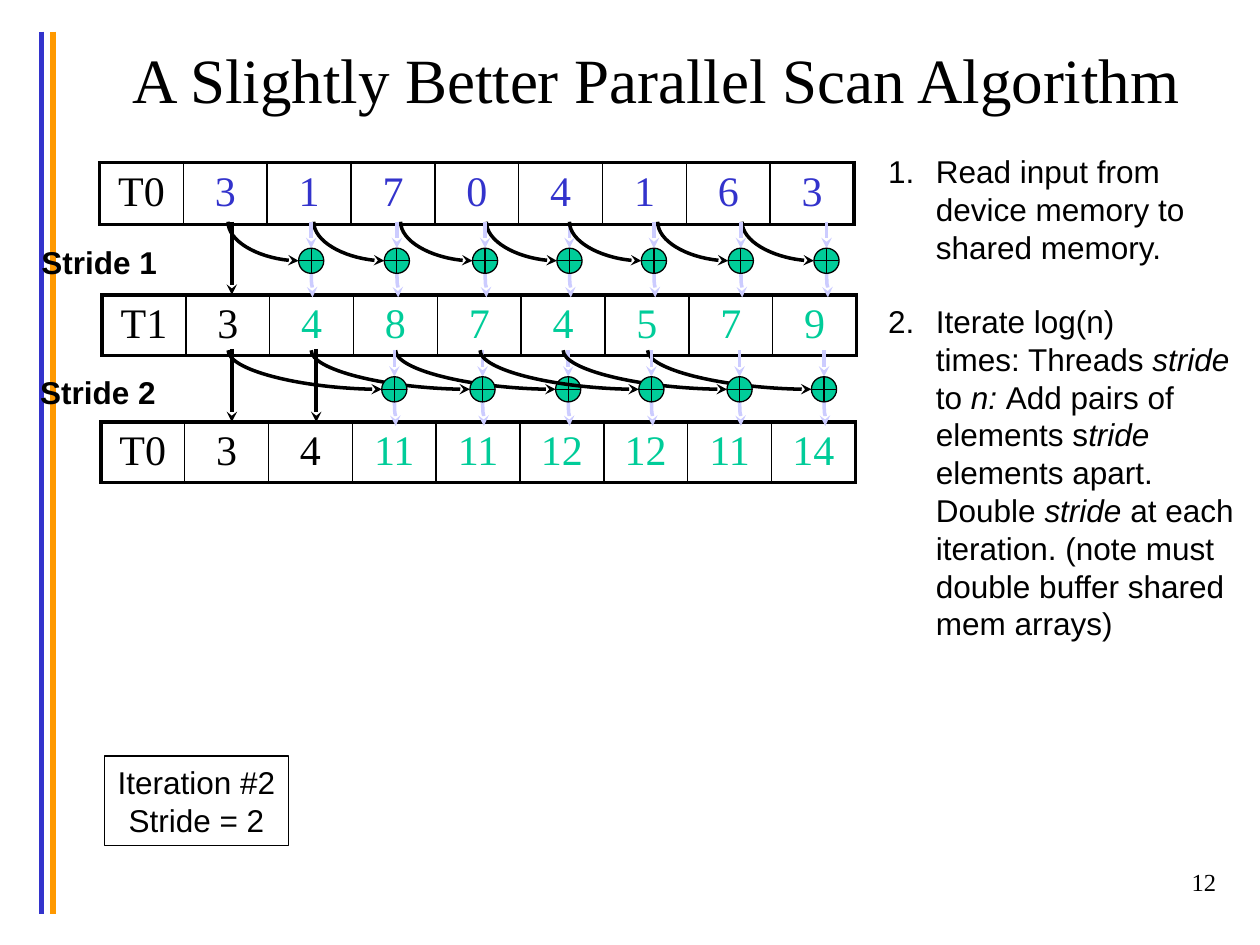
from lxml import etree
from pptx import Presentation
from pptx.dml.color import RGBColor
from pptx.enum import shapes as kinds, text as txt
from pptx.oxml.ns import qn
from pptx.util import Inches, Pt

BLACK = RGBColor(0, 0, 0)
BLUE = RGBColor(0x33, 0x33, 0xCC)
ORANGE = RGBColor(0xFF, 0x99, 0x00)
GREEN = RGBColor(0x00, 0xCC, 0x99)
LILAC = RGBColor(0xCC, 0xCC, 0xFF)
SERIF, SANS = "Times New Roman", "Arial"
LEFT, MID, RIGHT = txt.PP_ALIGN.LEFT, txt.PP_ALIGN.CENTER, txt.PP_ALIGN.RIGHT

deck = Presentation()
deck.slide_width, deck.slide_height = Inches(10), Inches(7.5)
slide = deck.slides.add_slide(deck.slide_layouts[6])
items = slide.shapes


def style(para, size, face, align=LEFT, color=BLACK, bold=False):
    para.alignment = align
    for run in para.runs:
        run.font.size, run.font.name = Pt(size), face
        run.font.color.rgb, run.font.bold = color, bold


def link(x1, y1, x2, y2, color, width=2, head=True, bend=None):
    """Draw a line; bend names a curved preset that leaves its start downwards."""
    kind = kinds.MSO_CONNECTOR.STRAIGHT
    ends = x1, y1, x2, y2
    if bend:
        # A quarter turn swaps width and height about the same centre.
        kind = kinds.MSO_CONNECTOR.CURVE
        cx, cy = (x1 + x2) / 2, (y1 + y2) / 2
        dx, dy = (y2 - y1) / 2, (x2 - x1) / 2
        ends = cx + dx, cy - dy, cx - dx, cy + dy
    line = items.add_connector(kind, *[Inches(v) for v in ends])
    line.line.color.rgb, line.line.width = color, Pt(width)
    props = line.element.spPr
    if bend:
        line.rotation = 270
        props.find(qn("a:prstGeom")).set("prst", bend)
    if head:
        etree.SubElement(props.find(qn("a:ln")), qn("a:tailEnd"), type="stealth")
    etree.SubElement(props, qn("a:effectLst"))


# Side rules
link(0.33, 0.25, 0.33, 7.25, BLUE, 3, False)
link(0.42, 0.25, 0.42, 7.25, ORANGE, 3, False)

# Title, page number and stride labels
for words, x, y, w, h, size, face, align, bold in (
    ("12", 7.67, 6.83, 2.08, 0.5, 14, SERIF, RIGHT, False),
    ("A Slightly Better Parallel Scan Algorithm", 0.67, 0, 9.08, 1.25, 36, SERIF, MID, False),
    ("Stride 1", 0.23, 1.88, 1.12, 0.4, 18, SANS, LEFT, True),
    ("Stride 2", 0.22, 2.91, 1.12, 0.4, 18, SANS, LEFT, True),
):
    frame = items.add_textbox(Inches(x), Inches(y), Inches(w), Inches(h)).text_frame
    frame.word_wrap = not bold
    frame.text = words
    if size == 36:
        frame.vertical_anchor = txt.MSO_ANCHOR.MIDDLE
    style(frame.paragraphs[0], size, face, align, bold=bold)

# Array rows: the first "plain" cells are black, the rest take the row colour
for x, y, high, row, plain, color in (
    (0.79, 1.29, 0.49, "T0 3 1 7 0 4 1 6 3", 1, BLUE),
    (0.81, 2.34, 0.47, "T1 3 4 8 7 4 5 7 9", 2, GREEN),
    (0.8, 3.35, 0.47, "T0 3 4 11 11 12 12 11 14", 3, GREEN),
):
    words = row.split()
    last = len(words) - 1
    table = items.add_table(1, len(words), Inches(x), Inches(y), Inches(5.99), Inches(high)).table
    table.first_row = table.horz_banding = False
    for i, word in enumerate(words):
        cell = table.cell(0, i)
        cell.text = word
        cell.margin_top, cell.margin_bottom = Inches(0.05), Inches(0.03)
        cell.margin_left = cell.margin_right = Inches(0.05)
        style(cell.text_frame.paragraphs[0], 24, SERIF, MID, BLACK if i < plain else color)
        props = cell._tc.get_or_add_tcPr()
        for side in "LRTB":
            outer = side in "TB" or (side, i) in (("L", 0), ("R", last))
            edge = etree.SubElement(props, qn("a:ln" + side), w=str(Pt(2.25 if outer else 1)))
            fill = etree.SubElement(edge, qn("a:solidFill"))
            etree.SubElement(fill, qn("a:srgbClr"), val=str(BLACK))
        cell.fill.background()

# Values carried down unchanged
for x, y in ((1.84, 1.76), (1.84, 2.77), (2.51, 2.77)):
    link(x, y, x, y + 0.58, BLACK)

# Additions: each sum takes the value above and the one a stride to its left
for top, starts, sums in (
    (1.76, (3.86, 3.18, 2.49, 1.81, 5.89, 5.22, 4.52), (4.52, 3.85, 3.15, 2.47, 6.56, 5.88, 5.19)),
    (2.78, (3.14, 2.47, 1.81, 5.14, 4.47, 3.81), (4.51, 3.83, 3.13, 6.54, 5.87, 5.17)),
):
    for start, x in zip(starts, sums):
        link(start, top, x - 0.1, top + 0.31, BLACK, bend="curvedConnector2")
        link(x, top, x, top + 0.21, LILAC)
        link(x, top + 0.41, x + 0.01, top + 0.6, LILAC, bend="curvedConnector3")
        plus = items.add_shape(kinds.MSO_SHAPE.FLOWCHART_OR, Inches(x - 0.1),
                               Inches(top + 0.21), Inches(0.2), Inches(0.2))
        plus.shadow.inherit = False
        plus.fill.solid()
        plus.fill.fore_color.rgb = GREEN
        plus.line.color.rgb, plus.line.width = BLACK, Pt(0.75)

# Numbered steps; odd pieces are italic
steps = (
    ("Read input from \ndevice memory to \nshared memory.",),
    ("Iterate log(n) \ntimes: Threads ", "stride ", "to ", "n: ", "Add pairs of elements s",
     "tride", " elements apart. Double ", "stride",
     " at each iteration. (note must double buffer shared mem arrays)"),
)
frame = items.add_textbox(Inches(6.95), Inches(1.16), Inches(3.07), Inches(4.34)).text_frame
frame.word_wrap = True
for n, pieces in enumerate(steps):
    para = frame.add_paragraph() if n else frame.paragraphs[0]
    para.text = pieces[0]
    for k, piece in enumerate(pieces[1:], 1):
        run = para.add_run()
        run.text, run.font.italic = piece, k % 2 == 1
    style(para, 18, SANS)
    if n:
        para.space_before = Pt(20.7)
    props = para._p.get_or_add_pPr()
    props.set("marL", str(Inches(0.38)))
    props.set("indent", str(-Inches(0.38)))
    etree.SubElement(props, qn("a:buFont"), typeface=SANS)
    etree.SubElement(props, qn("a:buAutoNum"), type="arabicPeriod")

# Iteration box
box = items.add_shape(kinds.MSO_SHAPE.RECTANGLE, Inches(0.83), Inches(6), Inches(1.46), Inches(0.71))
box.shadow.inherit = False
box.fill.background()
box.line.color.rgb, box.line.width = BLACK, Pt(0.75)
box.text_frame.word_wrap = False
para = box.text_frame.paragraphs[0]
para.text = "Iteration #2\nStride = 2"
style(para, 18, SANS, MID)

deck.save("out.pptx")
